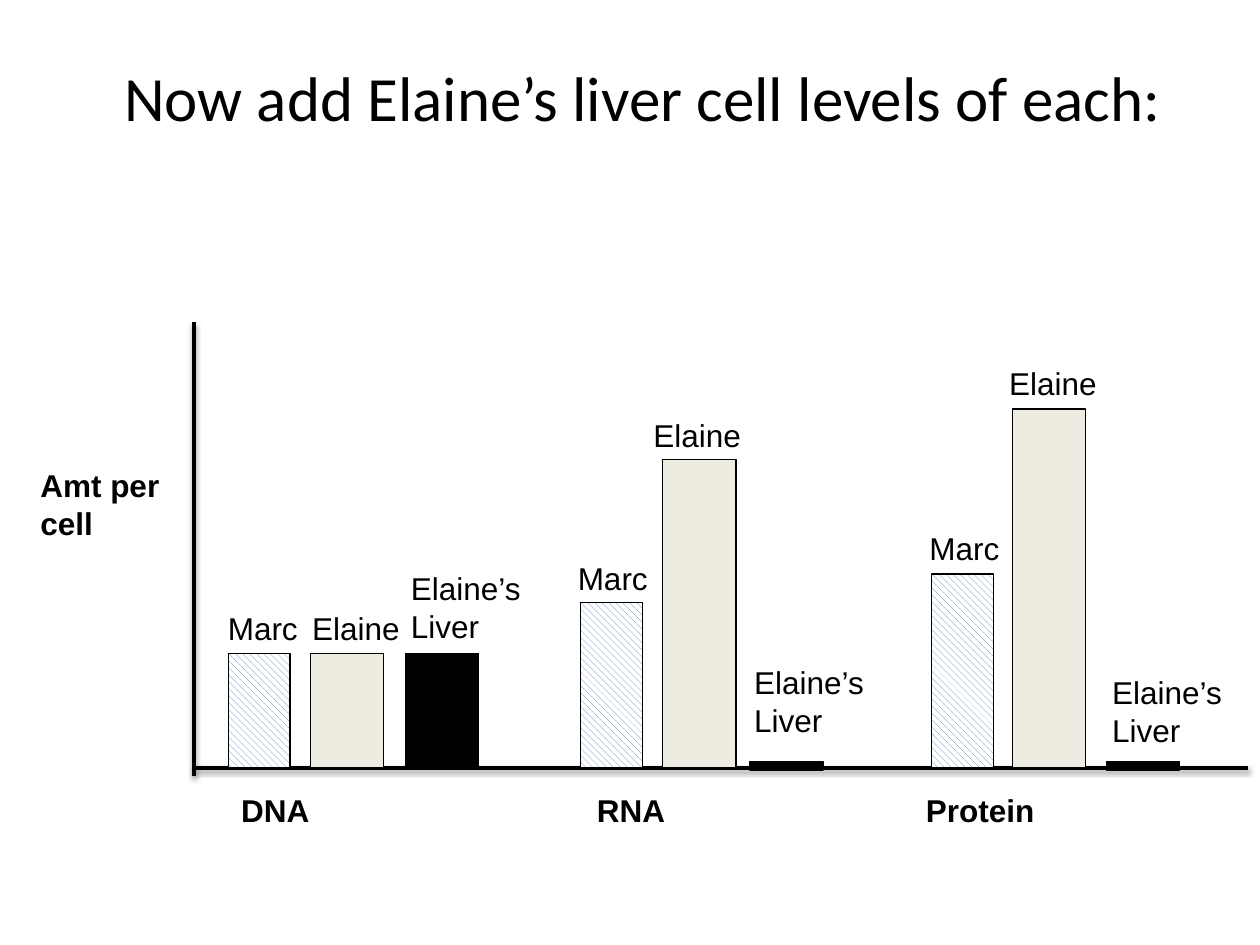
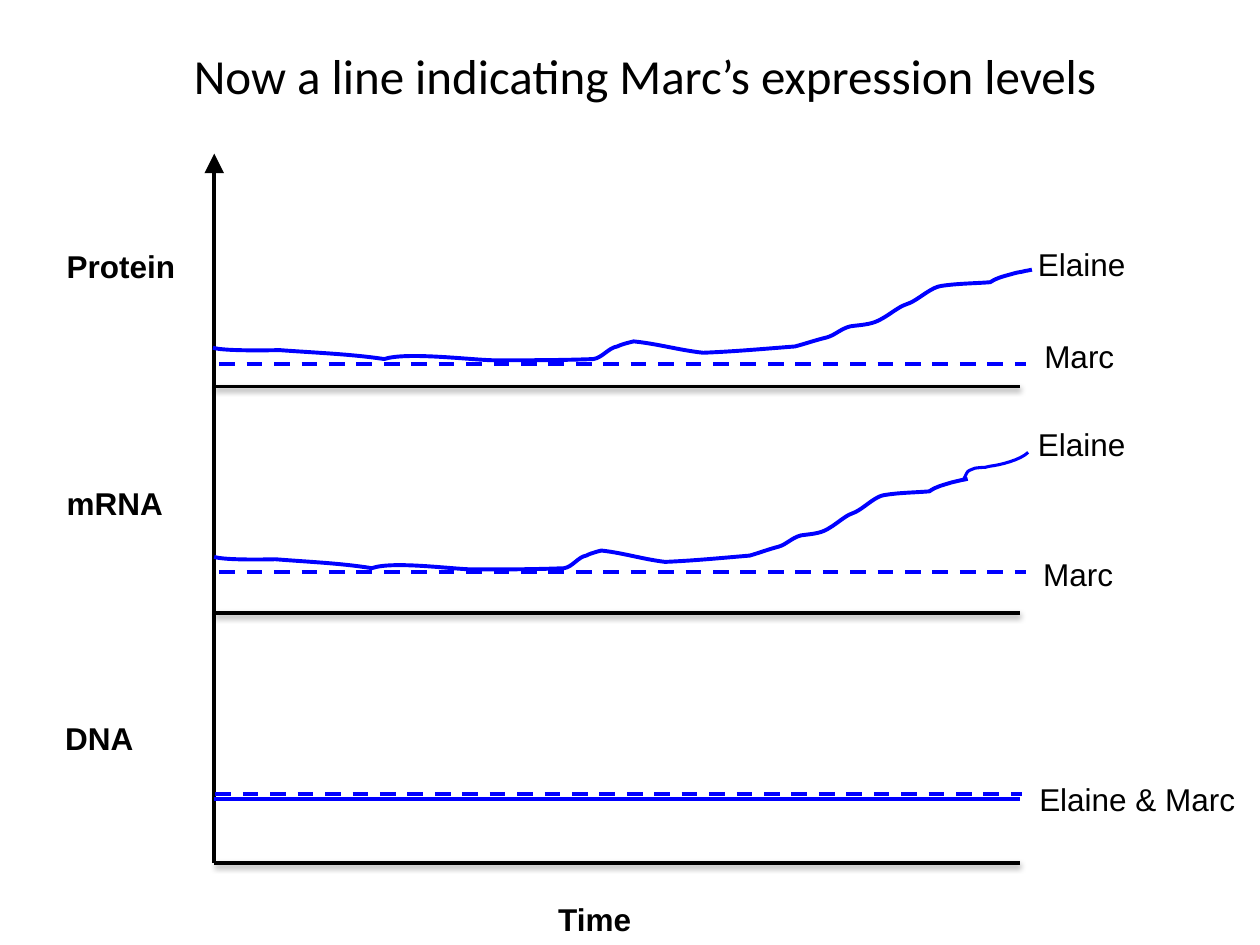
from lxml.etree import SubElement
from pptx import Presentation
from pptx.dml.color import RGBColor
from pptx.enum.dml import MSO_LINE, MSO_PATTERN
from pptx.enum.shapes import MSO_CONNECTOR, MSO_SHAPE
from pptx.enum.text import MSO_ANCHOR, PP_ALIGN
from pptx.oxml.ns import qn
from pptx.util import Pt

BLACK = RGBColor(0, 0, 0)
WHITE = RGBColor(255, 255, 255)
STEEL = RGBColor(0x4F, 0x81, 0xBD)
CREAM = RGBColor(0xEE, 0xEC, 0xE1)
BLUE = RGBColor(0, 0, 255)

BASE_Y = 438.9
MIN_BAR = 4.8
LIVER = "Elaine’s\nLiver"
BAR_STYLES = {"Marc": (35.3, None), "Elaine": (41.8, CREAM), LIVER: (41.8, BLACK)}

BARS = [
    ("Marc", 130.5, 65.5, 7.4, 29),
    ("Elaine", 177.5, 65.5, 6.2, 29),
    (LIVER, 231.8, 65.5, 4.1, 51.9),
    ("Marc", 331.9, 94.6, 8.8, 28.6),
    ("Elaine", 378.7, 176.2, 12.4, 28.6),
    (LIVER, 428.5, 3.6, 4.6, 59.8),
    ("Marc", 532.5, 110.9, 8.5, 29),
    ("Elaine", 578.4, 205.2, 8.8, 29),
    (LIVER, 632.2, 3.6, 3.8, 54.4),
]

AXIS_X, AXIS_END = 122.4, 583
EXPRESSION = [
    (0, 0), (6.5, 2.2), (36.7, 1.4), (38.2, 1.4),
    (58.3, 2.9), (78.5, 3.6), (97.9, 6.5),
    (110.9, 2.2), (149, 7.2), (161.3, 7.2),
    (180, 7.2), (198.7, 7.2), (217.4, 6.5),
    (222.5, 5.8), (226.1, 0), (231.1, -0.7),
    (234, -2.2), (240.5, -3.6), (240.5, -3.6),
    (254.2, -2.2), (266.4, 1.4), (280.1, 2.9),
    (298.1, 2.2), (314.6, 0.7), (332.6, -0.7),
    (338.4, -2.2), (344.2, -4.3), (350.6, -5.8),
    (355.7, -7.2), (358.6, -10.8), (364.3, -12.2),
    (369.4, -13), (375.8, -13), (380.9, -15.8),
    (385.2, -18), (388.8, -20.9), (392.4, -23),
    (394.6, -24.5), (398.2, -25.2), (400.3, -26.6),
    (405.4, -29.5), (411.1, -34.6), (416.2, -35.3),
    (425.5, -36.7), (434.9, -36.7), (444.2, -37.4),
    (448.6, -40.3), (452.9, -41), (457.9, -42.5),
    (460.1, -43.2), (462.2, -43.2), (464.4, -43.9),
    (465.1, -43.9), (468, -44.6), (468, -44.6),
]
MRNA_TAIL = [
    (0, 0), (1.4, -2.2), (1.4, -4.3), (3.6, -5),
    (7.2, -7.2), (11.5, -5.8), (15.1, -7.2),
    (20.9, -7.9), (32.4, -10.8), (36.7, -15.1),
]


def write(tf, text, size=18, font="Arial", color=BLACK, bold=False, align=PP_ALIGN.LEFT, tabs=()):
    for i, line in enumerate(text.split("\n")):
        p = tf.add_paragraph() if i else tf.paragraphs[0]
        p.alignment = align
        if tabs:
            stops = SubElement(p._p.get_or_add_pPr(), qn("a:tabLst"))
            for pos in tabs:
                SubElement(stops, qn("a:tab"), pos=str(Pt(pos)), algn="l")
        r = p.add_run()
        r.text = line
        r.font.size = Pt(size)
        r.font.name = font
        r.font.bold = bold
        r.font.color.rgb = color


class Deck:
    def __init__(self):
        self.prs = Presentation()
        self.prs.slide_width, self.prs.slide_height = Pt(720), Pt(540)

    def slide(self, title, x, y, h, size):
        self.s = self.prs.slides.add_slide(self.prs.slide_layouts[6])
        tf = self.text(title, x, y, 648, h, size=size, font="Calibri", align=PP_ALIGN.CENTER)
        tf.vertical_anchor = MSO_ANCHOR.MIDDLE

    def text(self, text, x, y, w=90, h=29, **fmt):
        tf = self.s.shapes.add_textbox(Pt(x), Pt(y), Pt(w), Pt(h)).text_frame
        tf.word_wrap = True
        write(tf, text, **fmt)
        return tf

    def bar(self, x, y, w, h, color=None):
        sp = self.s.shapes.add_shape(MSO_SHAPE.RECTANGLE, Pt(x), Pt(y), Pt(w), Pt(h))
        sp.shadow.inherit = False
        if color is None:
            sp.fill.patterned()
            sp.fill.pattern = MSO_PATTERN.WIDE_DOWNWARD_DIAGONAL
            sp.fill.fore_color.rgb = STEEL
            sp.fill.back_color.rgb = WHITE
        else:
            sp.fill.solid()
            sp.fill.fore_color.rgb = color
        sp.line.color.rgb = BLACK
        sp.line.width = Pt(0.75)

    def line(self, x1, y1, x2, y2, color=BLACK, width=2.25, dash=False, arrow=False, shadow=False):
        c = self.s.shapes.add_connector(MSO_CONNECTOR.STRAIGHT, Pt(x1), Pt(y1), Pt(x2), Pt(y2))
        c.line.color.rgb = color
        c.line.width = Pt(width)
        if dash:
            c.line.dash_style = MSO_LINE.DASH
        spPr = c.element.spPr
        if arrow:
            SubElement(spPr.find(qn("a:ln")), qn("a:tailEnd"), type="triangle", w="lg", len="lg")
        effects = SubElement(spPr, qn("a:effectLst"))
        if shadow:
            outer = SubElement(effects, qn("a:outerShdw"), blurRad=str(Pt(3.1)),
                               dist=str(Pt(1.6)), dir="5400000", rotWithShape="0")
            rgb = SubElement(outer, qn("a:srgbClr"), val=str(BLACK))
            SubElement(rgb, qn("a:alpha"), val="38000")

    def axis(self, *ends):
        self.line(*ends, width=2, shadow=True)

    def curve(self, x, y, points, x_scale=1, width=2.25):
        fb = self.s.shapes.build_freeform(Pt(x), Pt(y))
        fb.add_line_segments([(Pt(x + dx * x_scale), Pt(y + dy)) for dx, dy in points[1:]],
                             close=False)
        sp = fb.convert_to_shape()
        outline = next(sp.element.iter(qn("a:path")))
        segments = outline.findall(qn("a:lnTo"))
        for i in range(0, len(segments), 3):
            cubic = SubElement(outline, qn("a:cubicBezTo"))
            for segment in segments[i:i + 3]:
                cubic.append(segment[0])
                outline.remove(segment)
        sp.shadow.inherit = False
        sp.fill.background()
        sp.line.color.rgb = BLUE
        sp.line.width = Pt(width)


def liver_slide(d):
    d.slide("Now add Elaine’s liver cell levels of each:", 43.2, -3.2, 116.6, 36)
    d.axis(110.9, 184.3, 110.9, 443.5)
    d.axis(110.9, BASE_Y, 713.2, BASE_Y)
    d.text("Amt per cell", 16, 262.8, 85, 51, bold=True)
    d.text("DNA\tRNA\tProtein", 130.7, 448.6, 520, bold=True, tabs=(203.3, 391.3))
    for name, x, h, shift, rise in BARS:
        w, color = BAR_STYLES[name]
        top = BASE_Y - h
        d.bar(x, top, w, max(h, MIN_BAR), color)
        d.text(name, x - shift, top - rise, h=51 if name == LIVER else 29)


def expression_slide(d):
    d.slide("Now a line indicating Marc’s expression levels", 44.6, -2.2, 90, 28)
    for y in (493.2, 350.4, 221):
        d.axis(AXIS_X, y, AXIS_END, y)
    d.line(AXIS_X, 493.2, AXIS_X, 87.8, arrow=True)
    for text, x, y in (("Protein", 31, 137.5), ("mRNA", 31, 272.9),
                       ("DNA", 30.2, 407.2), ("Time", 311.9, 510.9)):
        d.text(text, x, y, bold=True)
    d.line(AXIS_X, 456.5, AXIS_END, 456.5, BLUE)
    for x, y in ((123.1, 453.6), (125.3, 326.9), (125.3, 208.1)):
        d.line(x, y, x + 460.8, y, BLUE, dash=True)
    d.curve(121.7, 198.7, EXPRESSION)
    d.curve(AXIS_X, 318.2, EXPRESSION, x_scale=0.92)
    d.curve(550.8, 273.6, MRNA_TAIL, width=1.75)
    for text, x, y in (("Elaine", 586, 136.5), ("Marc", 589.7, 189),
                       ("Elaine", 586, 239.4), ("Marc", 589, 313.5),
                       ("Elaine & Marc", 586.8, 442.1)):
        d.text(text, x, y, 130)


def main():
    d = Deck()
    liver_slide(d)
    expression_slide(d)
    d.prs.save("out.pptx")


if __name__ == "__main__":
    main()
